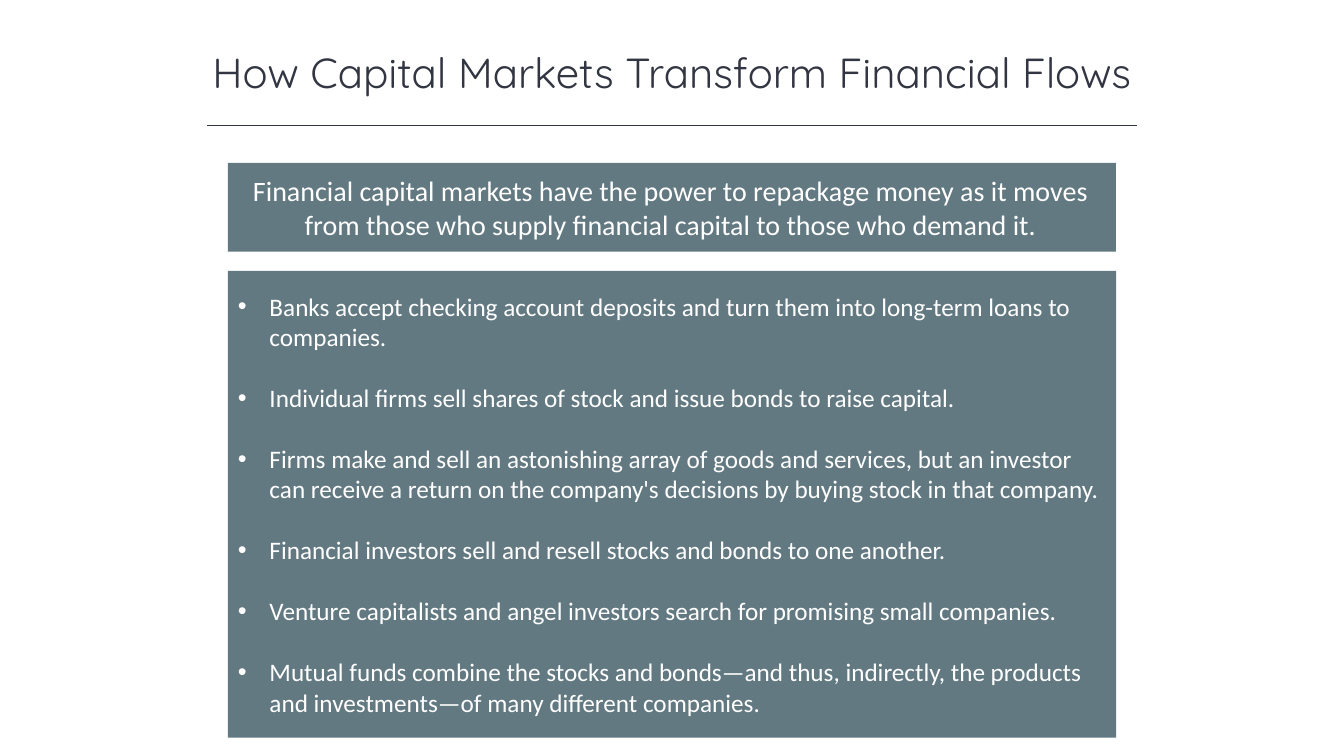
from lxml import etree
from pptx import Presentation
from pptx.dml.color import RGBColor
from pptx.enum.shapes import MSO_CONNECTOR, MSO_SHAPE
from pptx.enum.text import MSO_ANCHOR, MSO_AUTO_SIZE, PP_ALIGN
from pptx.oxml.ns import qn
from pptx.util import Pt

RECT = MSO_SHAPE.RECTANGLE
STRAIGHT = MSO_CONNECTOR.STRAIGHT
MIDDLE = MSO_ANCHOR.MIDDLE
NO_FIT = MSO_AUTO_SIZE.NONE
LEFT, CENTER = PP_ALIGN.LEFT, PP_ALIGN.CENTER

TITLE = "How Capital Markets Transform Financial Flows"
SUMMARY = (
    "Financial capital markets have the power to repackage money as it moves "
    "from those who supply financial capital to those who demand it."
)
POINTS = [
    "Banks accept checking account deposits and turn them into long-term loans to companies.",
    "Individual firms sell shares of stock and issue bonds to raise capital.",
    "Firms make and sell an astonishing array of goods and services, but an investor "
    "can receive a return on the company's decisions by buying stock in that company.",
    "Financial investors sell and resell stocks and bonds to one another.",
    "Venture capitalists and angel investors search for promising small companies.",
    "Mutual funds combine the stocks and bonds—and thus, indirectly, the products "
    "and investments—of many different companies.",
]


def rgb(value):
    return RGBColor.from_string(value)


def add_bullet(p, indent):
    pPr = p._p.get_or_add_pPr()
    pPr.set("marL", str(Pt(indent)))
    pPr.set("indent", str(-Pt(indent)))
    etree.SubElement(pPr, qn("a:buFont")).set("typeface", "Arial")
    etree.SubElement(pPr, qn("a:buChar")).set("char", "•")


def write(tf, lines, font="Calibri", size=18, color="FFFFFF", align=LEFT, gap=0, bullet=0):
    tf.word_wrap = True
    tf.auto_size = NO_FIT
    tf.vertical_anchor = MIDDLE
    for i, text in enumerate(lines):
        p = tf.add_paragraph() if i else tf.paragraphs[0]
        p.alignment = align
        p.space_before = Pt(gap if i else 0)
        if bullet:
            add_bullet(p, bullet)
        r = p.add_run()
        r.text = text
        r.font.name = font
        r.font.size = Pt(size)
        r.font.color.rgb = rgb(color)


class Slide:
    INK = "323542"
    PANEL = "627981"

    def __init__(self, prs):
        self.s = prs.slides.add_slide(prs.slide_layouts[1])

    def place(self, sp, x, y, w, h):
        sp.left, sp.top, sp.width, sp.height = Pt(x), Pt(y), Pt(w), Pt(h)

    def title(self, text, x, y, w, h):
        sp = self.s.shapes.title
        self.place(sp, x, y, w, h)
        write(sp.text_frame, [text], font="Quicksand", size=30, color=self.INK, align=CENTER)

    def rule(self, x1, x2, y):
        line = self.s.shapes.add_connector(STRAIGHT, Pt(x1), Pt(y), Pt(x2), Pt(y))
        line.line.color.rgb = rgb(self.INK)
        line.line.width = Pt(1)
        etree.SubElement(line._element.spPr, qn("a:effectLst"))

    def panel(self, shapes, x, y, w, h):
        sp = shapes.add_shape(RECT, Pt(x), Pt(y), Pt(w), Pt(h))
        sp.shadow.inherit = False
        sp.fill.solid()
        sp.fill.fore_color.rgb = rgb(self.PANEL)
        sp.line.fill.background()
        return sp

    def banner(self, text, x, y, w, h):
        group = self.s.shapes.add_group_shape()
        self.panel(group.shapes, x, y, w, h)
        sp = self.panel(group.shapes, x + 8.5, y + 3.8, w - 19, h - 8)
        write(sp.text_frame, [text], size=20, align=CENTER)

    def bullets(self, lines, x, y, w, h):
        sp = self.s.placeholders[1]
        self.place(sp, x, y, w, h)
        sp.fill.solid()
        sp.fill.fore_color.rgb = rgb(self.PANEL)
        write(sp.text_frame, lines, gap=22, bullet=22.5)


def main():
    prs = Presentation()
    prs.slide_width, prs.slide_height = Pt(960), Pt(540)
    slide = Slide(prs)
    slide.title(TITLE, 120, 29.5, 720, 44)
    slide.rule(148, 812, 89.5)
    slide.banner(SUMMARY, 162.8, 116.4, 634.4, 63.4)
    slide.bullets(POINTS, 162.8, 193.4, 634.4, 333.4)
    prs.save("out.pptx")


if __name__ == "__main__":
    main()
